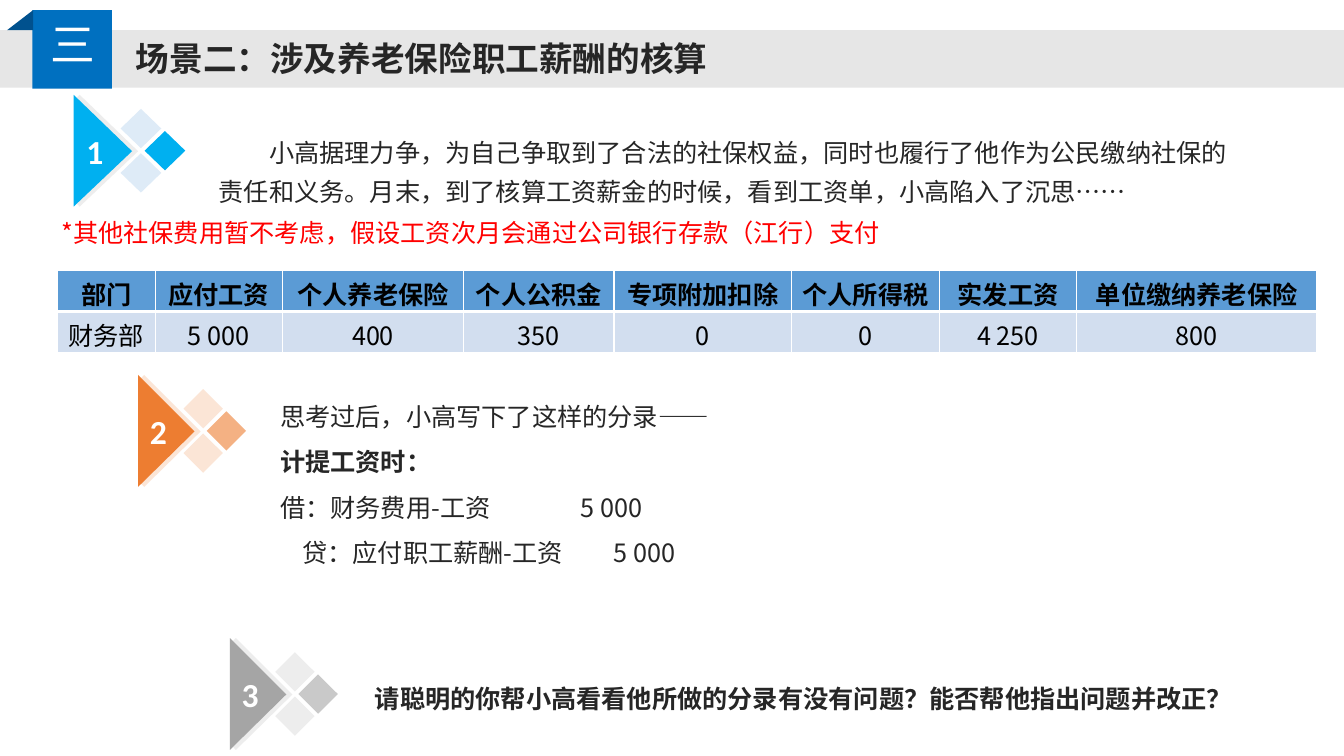
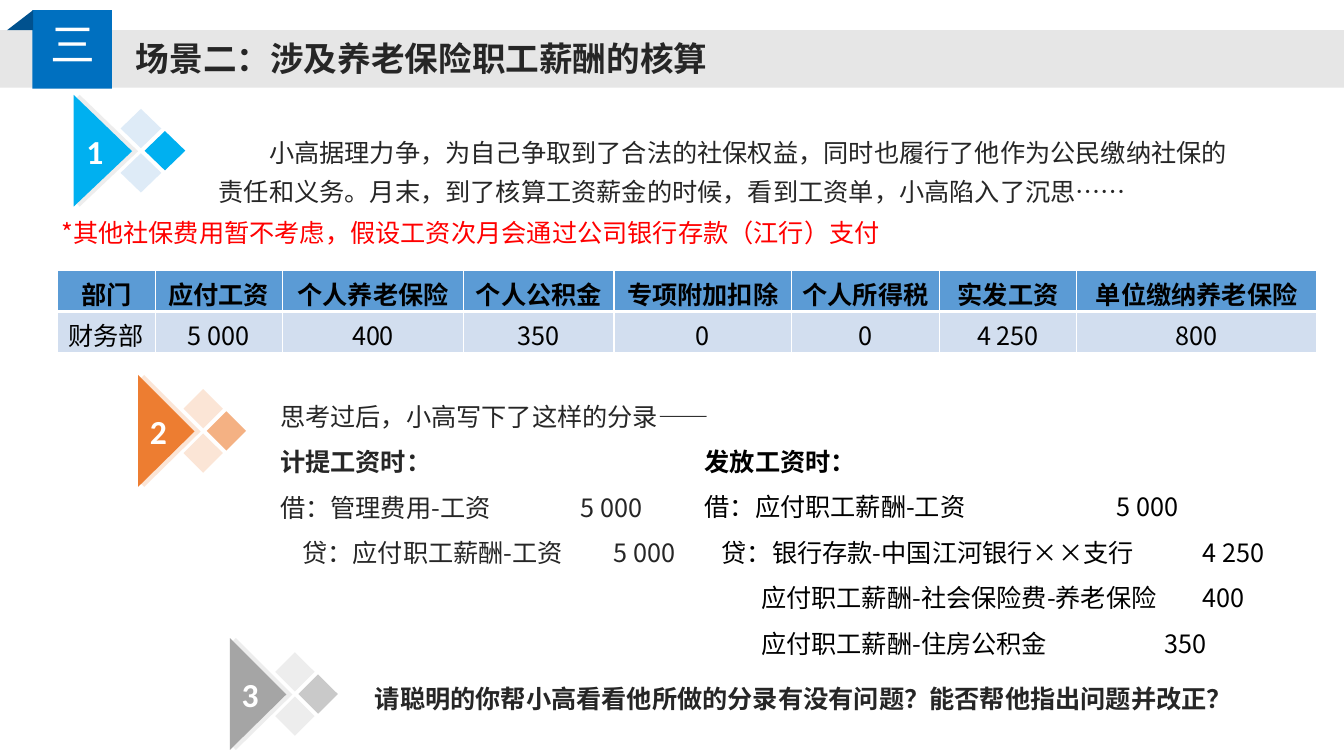
from dataclasses import dataclass
from typing import Optional

from lxml.etree import SubElement
from pptx import Presentation
from pptx.dml.color import RGBColor
from pptx.enum.shapes import MSO_SHAPE as Preset
from pptx.enum.text import MSO_ANCHOR as Anchor, MSO_AUTO_SIZE as AutoSize, PP_ALIGN as Align
from pptx.oxml.ns import qn
from pptx.util import Inches, Pt

WHITE = RGBColor(0xFF, 0xFF, 0xFF)
BLACK = RGBColor(0, 0, 0)
INK = RGBColor(0x26, 0x26, 0x26)
RED = RGBColor(0xFF, 0, 0)
BAND_GRAY = RGBColor(0xD9, 0xD9, 0xD9)
BADGE_BLUE = RGBColor(0, 0x70, 0xC0)
FOLD_BLUE = RGBColor(0, 0x51, 0x8E)
CYAN = RGBColor(0, 0xB0, 0xF0)
PALE_BLUE = RGBColor(0xDE, 0xEB, 0xF7)
ORANGE = RGBColor(0xED, 0x7D, 0x31)
MID_ORANGE = RGBColor(0xF4, 0xB1, 0x83)
PALE_ORANGE = RGBColor(0xFB, 0xE5, 0xD6)
GRAY = RGBColor(0xA5, 0xA5, 0xA5)
MID_GRAY = RGBColor(0xC9, 0xC9, 0xC9)
PALE_GRAY = RGBColor(0xED, 0xED, 0xED)
HEADER_BLUE = RGBColor(0x5B, 0x9B, 0xD5)
ROW_BLUE = RGBColor(0xD2, 0xDE, 0xEF)

SANS = "Noto Sans CJK SC"
SANS_JP = "Noto Sans CJK JP"
LATIN = "Calibri"


@dataclass(frozen=True)
class Style:
    size: float = 18
    color: RGBColor = INK
    bold: bool = False
    font: str = SANS


@dataclass(frozen=True)
class Line:
    text: str
    style: Style = Style()
    spacing: Optional[float] = None
    first_indent: float = 0
    tabs: tuple[float, ...] = ()


@dataclass(frozen=True)
class Marker:
    number: str
    left: float
    top: float
    width: float
    main: RGBColor
    accent: RGBColor
    pale: RGBColor
    edge: RGBColor


@dataclass(frozen=True)
class EntrySlide:
    accrual_account: str
    shows_payment: bool


BODY = Style()
STRONG = Style(bold=True)
PAY_BODY = Style(color=BLACK)
PAY_STRONG = Style(color=BLACK, bold=True)

MARKERS = (
    Marker("1", 0.73, 0.94, 0.58, CYAN, CYAN, PALE_BLUE, PALE_GRAY),
    Marker("2", 1.37, 3.72, 0.56, ORANGE, MID_ORANGE, PALE_ORANGE, PALE_ORANGE),
    Marker("3", 2.28, 6.33, 0.56, GRAY, MID_GRAY, PALE_GRAY, PALE_GRAY),
)

STORY = Line(
    "小高据理力争，为自己争取到了合法的社保权益，同时也履行了他作为公民缴纳社保的"
    "责任和义务。月末，到了核算工资薪金的时候，看到工资单，小高陷入了沉思……",
    BODY, 1.3, first_indent=0.5)
ASSUMPTION = Line("*其他社保费用暂不考虑，假设工资次月会通过公司银行存款（江行）支付", Style(color=RED))
QUESTION = Line("请聪明的你帮小高看看他所做的分录有没有问题？能否帮他指出问题并改正？", STRONG, 1.3)

PAYROLL = (
    ("部门", "应付工资", "个人养老保险", "个人公积金", "专项附加扣除", "个人所得税", "实发工资", "单位缴纳养老保险"),
    ("财务部", "5 000", "400", "350", "0", "0", "4 250", "800"),
)
PAYROLL_WIDTHS = (0.97, 1.26, 1.8, 1.49, 1.76, 1.47, 1.36, 2.38)

PAYMENT = (
    Line("发放工资时：", PAY_STRONG, 1.5),
    Line("借：应付职工薪酬-工资\t5 000", PAY_BODY, 1.5, tabs=(4.09,)),
    Line("\t贷：银行存款-中国江河银行××支行\t4 250", PAY_BODY, 1.5, tabs=(0.17, 4.94)),
    Line("\t应付职工薪酬-社会保险费-养老保险\t400", PAY_BODY, 1.5, tabs=(0.56, 4.94)),
    Line("\t应付职工薪酬-住房公积金\t350", PAY_BODY, 1.5, tabs=(0.56, 4.56)),
)

SLIDES = (EntrySlide("财务费用", False), EntrySlide("管理费用", True))


def accrual(account: str) -> tuple[Line, ...]:
    return (
        Line("思考过后，小高写下了这样的分录——", BODY, 1.5),
        Line("计提工资时：", STRONG, 1.5),
        Line(f"借：{account}-工资\t5 000", BODY, 1.5, tabs=(2.98,)),
        Line("\t贷：应付职工薪酬-工资\t5 000", BODY, 1.5, tabs=(0.22, 3.31)),
    )


def write_run(paragraph, text: str, style: Style) -> None:
    run = paragraph.add_run()
    run.text = text
    run.font.size = Pt(style.size)
    run.font.bold = style.bold
    run.font.color.rgb = style.color
    run.font.name = style.font
    properties = run._r.get_or_add_rPr()
    properties.set("lang", "zh-CN")
    SubElement(properties, qn("a:ea"), typeface=style.font)


def write_line(paragraph, line: Line) -> None:
    properties = paragraph._p.get_or_add_pPr()
    if line.first_indent:
        properties.set("marL", "0")
        properties.set("indent", str(Inches(line.first_indent)))
    if line.tabs:
        stops = SubElement(properties, qn("a:tabLst"))
        for stop in line.tabs:
            SubElement(stops, qn("a:tab"), pos=str(Inches(stop)), algn="l")
    if line.spacing:
        paragraph.line_spacing = line.spacing
    write_run(paragraph, line.text, line.style)


def add_text(slide, left: float, top: float, width: float, height: float,
             *lines: Line, wrap: bool = True) -> None:
    frame = slide.shapes.add_textbox(
        Inches(left), Inches(top), Inches(width), Inches(height)).text_frame
    frame.word_wrap = wrap
    frame.auto_size = AutoSize.SHAPE_TO_FIT_TEXT
    for index, line in enumerate(lines):
        write_line(frame.add_paragraph() if index else frame.paragraphs[0], line)


def paint(shape, color: RGBColor):
    shape.shadow.inherit = False
    shape.fill.solid()
    shape.fill.fore_color.rgb = color
    shape.line.fill.background()
    return shape


def add_preset(slide, preset, left: float, top: float, width: float, height: float,
               color: RGBColor):
    return paint(slide.shapes.add_shape(
        preset, Inches(left), Inches(top), Inches(width), Inches(height)), color)


def add_outline(slide, points: list[tuple[float, float]], color: RGBColor):
    start, *rest = [(Inches(x), Inches(y)) for x, y in points]
    builder = slide.shapes.build_freeform(*start, scale=1.0)
    builder.add_line_segments(rest, close=True)
    return paint(builder.convert_to_shape(), color)


def add_title_band(slide) -> None:
    band = add_preset(slide, Preset.RECTANGLE, 0, 0.3, 13.33, 0.57, BAND_GRAY)
    band_color = band._element.spPr.find(qn("a:solidFill")).find(qn("a:srgbClr"))
    SubElement(band_color, qn("a:alpha"), val="65000")
    add_preset(slide, Preset.RECTANGLE, 0.32, 0.1, 0.79, 0.78, BADGE_BLUE)
    add_outline(slide, [(0.07, 0.3), (0.33, 0.1), (0.33, 0.3)], FOLD_BLUE)
    add_text(slide, 1.25, 0.33, 5.92, 0.5,
             Line("场景二：涉及养老保险职工薪酬的核算", Style(24, bold=True)), wrap=False)
    add_text(slide, 0.4, 0.12, 0.65, 0.64,
             Line("三", Style(32, WHITE, font=SANS_JP)), wrap=False)


def add_marker(slide, marker: Marker) -> None:
    left, top, width = marker.left, marker.top, marker.width
    stretch = width / 0.56
    for dx, dy, color in ((0.45, 0.14, marker.pale), (0.45, 0.58, marker.pale),
                          (0.68, 0.36, marker.accent)):
        add_preset(slide, Preset.DIAMOND, left + dx * stretch, top + dy,
                   0.39 * stretch, 0.39, color)

    middle, bottom = top + 0.56, top + 1.11
    add_outline(slide, [(left + 0.06, top), (left + width + 0.06, middle),
                        (left + 0.06, bottom), (left + 0.03, bottom - 0.03),
                        (left + width, middle), (left + 0.03, top + 0.03)], marker.edge)
    arrow = add_outline(slide, [(left, top), (left + width, middle), (left, bottom)],
                        marker.main)
    frame = arrow.text_frame
    frame.margin_left = frame.margin_top = frame.margin_bottom = 0
    frame.margin_right = Inches(0.16)
    frame.vertical_anchor = Anchor.MIDDLE
    frame.paragraphs[0].alignment = Align.CENTER
    write_run(frame.paragraphs[0], marker.number, Style(24, WHITE, True, LATIN))


def set_borders(cell, top: float, bottom: float) -> None:
    properties = cell._tc.get_or_add_tcPr()
    for index, (side, points) in enumerate(
            (("lnL", 1), ("lnR", 1), ("lnT", top), ("lnB", bottom))):
        border = SubElement(properties, qn(f"a:{side}"), w=str(Pt(points)))
        SubElement(SubElement(border, qn("a:solidFill")), qn("a:srgbClr"), val=str(WHITE))
        properties.insert(index, border)


def add_payroll(slide) -> None:
    table = slide.shapes.add_table(
        len(PAYROLL), len(PAYROLL_WIDTHS), Inches(0.57), Inches(2.68),
        Inches(sum(PAYROLL_WIDTHS)), Inches(0.82)).table
    for column, width in zip(table.columns, PAYROLL_WIDTHS):
        column.width = Inches(width)
    for row, values in enumerate(PAYROLL):
        header = row == 0
        table.rows[row].height = Inches(0.41)
        for column, value in enumerate(values):
            cell = table.cell(row, column)
            cell.fill.solid()
            cell.fill.fore_color.rgb = HEADER_BLUE if header else ROW_BLUE
            cell.vertical_anchor = Anchor.MIDDLE
            cell.margin_top, cell.margin_bottom = Inches(0.05), 0
            set_borders(cell, *((1, 3) if header else (3, 1)))
            paragraph = cell.text_frame.paragraphs[0]
            paragraph.alignment = Align.CENTER
            write_run(paragraph, value, Style(color=BLACK, bold=header))


def add_entry_slide(deck, content: EntrySlide) -> None:
    slide = deck.slides.add_slide(deck.slide_layouts[6])
    add_title_band(slide)
    for marker in MARKERS:
        add_marker(slide, marker)
    add_text(slide, 2.07, 1.22, 10.32, 0.85, STORY)
    add_text(slide, 0.51, 2.11, 8.53, 0.4, ASSUMPTION)
    add_payroll(slide)
    add_text(slide, 2.68, 3.78, 9.56, 1.91, *accrual(content.accrual_account))
    add_text(slide, 3.62, 6.64, 9.03, 0.46, QUESTION)
    if content.shows_payment:
        add_text(slide, 6.89, 4.23, 6, 2.37, *PAYMENT)


def main() -> None:
    deck = Presentation()
    deck.slide_width, deck.slide_height = Inches(13.33), Inches(7.5)
    for content in SLIDES:
        add_entry_slide(deck, content)
    deck.save("out.pptx")


if __name__ == "__main__":
    main()
